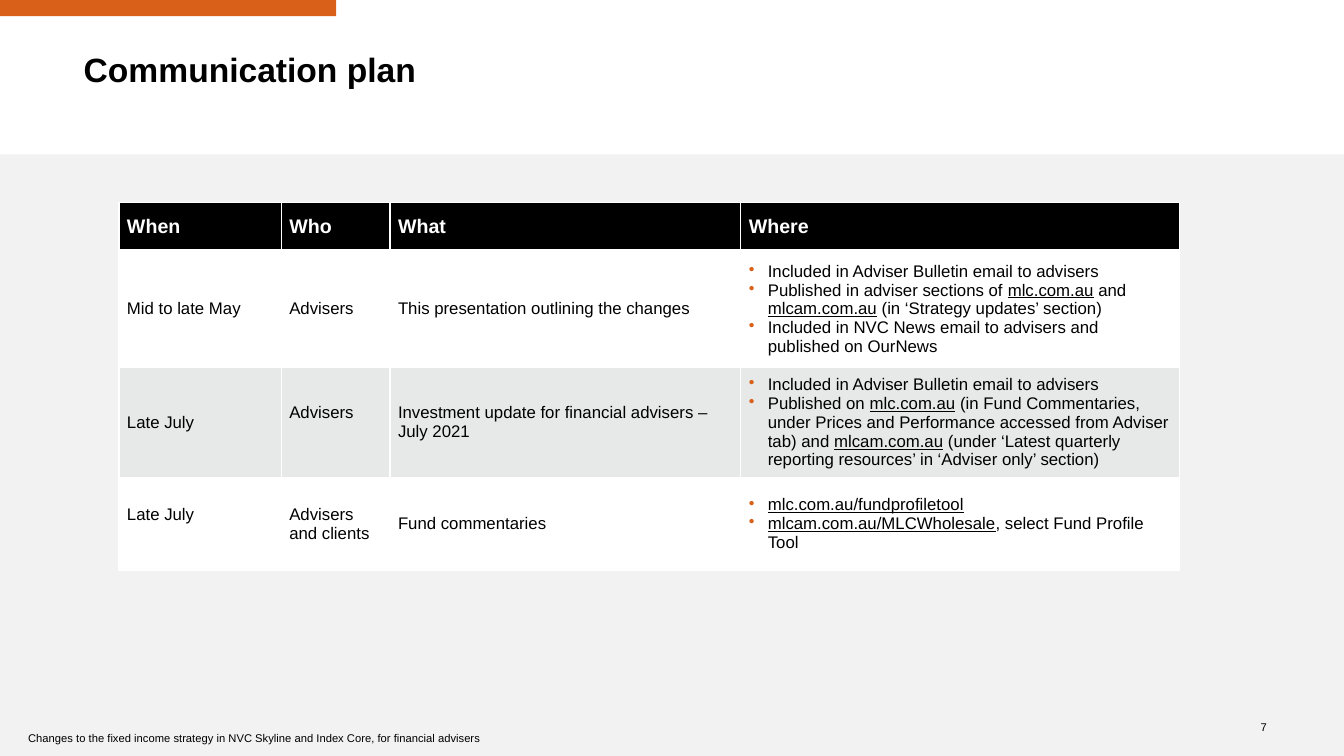
from lxml.etree import SubElement
from pptx import Presentation
from pptx.dml.color import RGBColor
from pptx.enum.shapes import MSO_SHAPE as Shape
from pptx.enum.text import MSO_ANCHOR as Anchor, PP_ALIGN as Align
from pptx.oxml.ns import qn
from pptx.util import Cm, Pt

ORANGE = RGBColor(0xD8, 0x60, 0x18)
BLACK = RGBColor(0x00, 0x00, 0x00)
WHITE = RGBColor(0xFF, 0xFF, 0xFF)
PALE_GREY = RGBColor(0xF2, 0xF2, 0xF2)
BAND_GREY = RGBColor(0xE7, 0xE9, 0xE9)

COLUMN_WIDTHS = [4.09, 2.74, 8.84, 11.05]
ROW_HEIGHTS = [1.2, 2.95, 2.75, 2.34]
ROW_FILLS = [BLACK, WHITE, BAND_GREY, WHITE]
WHAT, WHERE = 2, 3
CELL_MARGIN = 0.2
# Cells whose text sits half a line above the middle
RAISED_CELLS = [(2, 1), (3, 0)]

# Text between underscores is underlined; each line is a paragraph
PLAN = [
    ["When", "Who", "What", "Where"],
    ["Mid to late May", "Advisers", "This presentation outlining the changes",
     "Included in Adviser Bulletin email to advisers\n"
     "Published in adviser sections of _mlc.com.au_ and _mlcam.com.au_ "
     "(in ‘Strategy updates’ section)\n"
     "Included in NVC News email to advisers and published on OurNews"],
    ["Late July", "Advisers", "Investment update for financial advisers – July 2021",
     "Included in Adviser Bulletin email to advisers\n"
     "Published on _mlc.com.au_ (in Fund Commentaries, under Prices and Performance "
     "accessed from Adviser tab) and _mlcam.com.au_ (under ‘Latest quarterly "
     "reporting resources’ in ‘Adviser only’ section)"],
    ["Late July", "Advisers and clients", "Fund commentaries",
     "_mlc.com.au/fundprofiletool_\n"
     "_mlcam.com.au/MLCWholesale_, select Fund Profile Tool"],
]


def format_font(font, size, color=BLACK, bold=False):
    font.name = "Arial"
    font.size = Pt(size)
    font.bold = bold
    font.color.rgb = color


def add_bullet(paragraph):
    properties = paragraph._p.get_or_add_pPr()
    properties.set("marL", str(Cm(0.48)))
    properties.set("indent", str(-Cm(0.48)))
    bullet_color = SubElement(properties, qn("a:buClr"))
    SubElement(bullet_color, qn("a:srgbClr"), val=str(ORANGE))
    SubElement(properties, qn("a:buChar"), char="•")


presentation = Presentation()
presentation.slide_width = Cm(33.87)
presentation.slide_height = Cm(19.05)
slide = presentation.slides.add_slide(presentation.slide_layouts[5])

# Accent bar and grey body
for left, top, width, height, color in [
    (0, 0, 8.47, 0.41, ORANGE),
    (0, 3.89, 33.87, 15.16, PALE_GREY),
]:
    panel = slide.shapes.add_shape(Shape.RECTANGLE, Cm(left), Cm(top), Cm(width), Cm(height))
    panel.shadow.inherit = False
    panel.fill.solid()
    panel.fill.fore_color.rgb = color
    panel.line.fill.background()

# Title
title = slide.shapes.title
title.left, title.top, title.width, title.height = Cm(2.11), Cm(1.35), Cm(27), Cm(1.45)
title_frame = title.text_frame
title_frame.text = "Communication plan"
title_frame.vertical_anchor = Anchor.TOP
title_frame.margin_left = title_frame.margin_right = 0
title_frame.margin_top = title_frame.margin_bottom = 0
title_paragraph = title_frame.paragraphs[0]
title_paragraph.alignment = Align.LEFT
title_paragraph.line_spacing = 0.9
format_font(title_paragraph.runs[0].font, 24, bold=True)

# Plan table
table = slide.shapes.add_table(
    len(PLAN), len(COLUMN_WIDTHS), Cm(3), Cm(5.11),
    Cm(sum(COLUMN_WIDTHS)), Cm(sum(ROW_HEIGHTS))).table
for column, width in zip(table.columns, COLUMN_WIDTHS):
    column.width = Cm(width)
for row, height in zip(table.rows, ROW_HEIGHTS):
    row.height = Cm(height)

for row_index, row_texts in enumerate(PLAN):
    is_header = row_index == 0
    for column_index, cell_text in enumerate(row_texts):
        cell = table.cell(row_index, column_index)
        cell.vertical_anchor = Anchor.MIDDLE
        cell.margin_left = cell.margin_right = Cm(CELL_MARGIN)
        cell.margin_top = cell.margin_bottom = Cm(CELL_MARGIN)
        if (row_index, column_index) in RAISED_CELLS:
            cell.margin_bottom = Cm(CELL_MARGIN + 0.48)

        for side in ("L", "R", "T", "B"):
            under_header = (row_index, side) in [(0, "B"), (1, "T")]
            border = SubElement(cell._tc.get_or_add_tcPr(), qn(f"a:ln{side}"),
                                w=str(Pt(3 if under_header else 1)))
            border_fill = SubElement(border, qn("a:solidFill"))
            SubElement(border_fill, qn("a:srgbClr"), val=str(WHITE))
        cell.fill.solid()
        cell.fill.fore_color.rgb = ROW_FILLS[row_index]

        cell.text_frame.text = cell_text
        for paragraph in cell.text_frame.paragraphs:
            pieces = paragraph.text.split("_")
            paragraph.clear()
            if column_index == WHERE and not is_header:
                add_bullet(paragraph)
            if column_index == WHAT and not is_header:
                paragraph.space_after = Pt(6)
            for piece_index, piece in enumerate(pieces):
                if piece:
                    run = paragraph.add_run()
                    run.text = piece
                    format_font(run.font, 14 if is_header else 12,
                                WHITE if is_header else BLACK, is_header)
                    run.font.underline = piece_index % 2 == 1

# Page number
number_box = slide.shapes.add_textbox(Cm(31.22), Cm(18.06), Cm(0.71), Cm(0.53))
number_frame = number_box.text_frame
number_frame.text = "7"
number_frame.word_wrap = False
number_frame.vertical_anchor = Anchor.MIDDLE
number_frame.margin_left = number_frame.margin_right = 0
number_frame.margin_top = number_frame.margin_bottom = 0
number_frame.paragraphs[0].alignment = Align.RIGHT
format_font(number_frame.paragraphs[0].runs[0].font, 8)

# Footer
footer_box = slide.shapes.add_textbox(Cm(0.46), Cm(18.31), Cm(12.7), Cm(0.53))
footer_frame = footer_box.text_frame
footer_frame.text = ("Changes to the fixed income strategy in NVC Skyline and Index Core, "
                     "for financial advisers")
footer_frame.word_wrap = True
format_font(footer_frame.paragraphs[0].runs[0].font, 8)

presentation.save("out.pptx")
